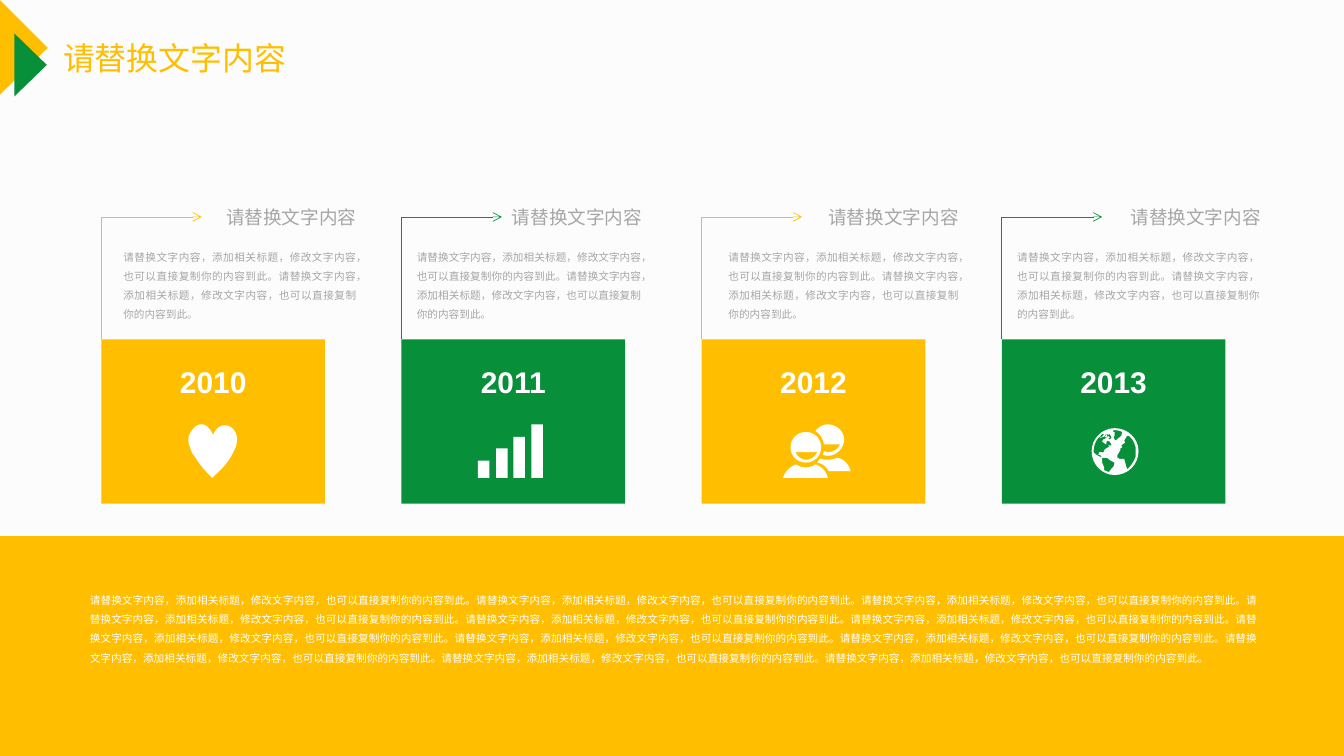
from lxml import etree
from pptx import Presentation
from pptx.dml.color import RGBColor
from pptx.enum import lang, shapes, text
from pptx.oxml.ns import qn
from pptx.util import Inches, Pt

GOLD = RGBColor(0xFF, 0xBF, 0x00)
GREEN = RGBColor(0x08, 0x8F, 0x39)
GREY = RGBColor(0xA6, 0xA6, 0xA6)
WHITE = RGBColor(0xFF, 0xFF, 0xFF)
PAPER = RGBColor(0xFC, 0xFC, 0xFC)
ALIGN = text.PP_ALIGN
RECT = shapes.MSO_SHAPE.RECTANGLE
HEAD = "请替换文字内容"
BODY = "请替换文字内容，添加相关标题，修改文字内容，也可以直接复制你的内容到此。"

deck = Presentation()
deck.slide_width, deck.slide_height = Inches(14.06), Inches(7.91)
slide = deck.slides.add_slide(deck.slide_layouts[6])
slide.background.fill.solid()
slide.background.fill.fore_color.rgb = PAPER


def write(words, x, y, w, h, size, color, align=ALIGN.LEFT, gap=1.0, bold=False, wrap=True):
    box = slide.shapes.add_textbox(Inches(x), Inches(y), Inches(w), Inches(h))
    frame = box.text_frame
    frame.margin_left = frame.margin_right = frame.margin_top = frame.margin_bottom = 0
    frame.word_wrap = wrap
    frame.auto_size = text.MSO_AUTO_SIZE.SHAPE_TO_FIT_TEXT
    para = frame.paragraphs[0]
    para.alignment, para.line_spacing = align, gap
    run = para.add_run()
    run.text = words
    font = run.font
    font.name, font.size, font.bold = "Arial", Pt(size), bold
    font.color.rgb = color
    font.language_id = lang.MSO_LANGUAGE_ID.SIMPLIFIED_CHINESE
    etree.SubElement(run._r.get_or_add_rPr(), qn("a:ea"), typeface="Arial")


def draw(rings, color):
    """Fill closed rings; a step of two numbers is a corner, of six a cubic curve."""
    pen = None
    for ring in rings:
        x, y = ring[0]
        dots = []
        for step in ring[1:]:
            if len(step) == 2:
                dots.append(step)
            else:
                a, b, c, d, e, f = step
                for n in range(1, 9):
                    t = n / 8
                    s = 1 - t
                    dots.append((s**3 * x + 3*s*s*t * a + 3*s*t*t * c + t**3 * e,
                                 s**3 * y + 3*s*s*t * b + 3*s*t*t * d + t**3 * f))
            x, y = step[-2:]
        start = [Inches(v) for v in ring[0]]
        if pen is None:
            pen = slide.shapes.build_freeform(*start, scale=1.0)
        else:
            pen.move_to(*start)
        pen.add_line_segments([(Inches(p), Inches(q)) for p, q in dots], close=True)
    form = pen.convert_to_shape()
    form.shadow.inherit = False
    form.fill.solid()
    form.fill.fore_color.rgb = color
    form.line.fill.background()


# Footer band, four cards and chart bars: group, left, top, width, height, colour
cards = [1.06 + 3.14 * i for i in range(4)]
hues = [GOLD, GREEN] * 2
blocks = [(slide.shapes, 0, 5.61, 14.06, 2.3, GOLD)]
blocks += [(slide.shapes, x, 3.55, 2.34, 1.72, hue) for x, hue in zip(cards, hues)]
bars = slide.shapes.add_group_shape()
blocks += [(bars.shapes, x, 5 - h, 0.12, h, WHITE)
           for x, h in [(5, 0.18), (5.19, 0.31), (5.37, 0.43), (5.56, 0.56)]]
for home, x, y, w, h, hue in blocks:
    rect = home.add_shape(RECT, Inches(x), Inches(y), Inches(w), Inches(h))
    rect.shadow.inherit = False
    rect.fill.solid()
    rect.fill.fore_color.rgb = hue
    rect.line.fill.background()
tree = slide.shapes._spTree
tree.append(bars._element)
write(BODY * 12, 0.94, 6.15, 12.23, 0.81, 8, WHITE, ALIGN.JUSTIFY, 1.5)

# Rising line, arrow, heading, body and year of each card
heads = [(2.03, 1.7), (5.15, 1.57), (8.09, 1.94), (11.47, 1.72)]
bodies = [(1.29, 2.44), (4.36, 2.35), (7.62, 2.41), (10.64, 2.54)]
for i, (x, hue) in enumerate(zip(cards, hues)):
    for ends in [(x, 3.55, x, 2.27), (x, 2.27, x + 1.05, 2.27)]:
        line = slide.shapes.add_connector(shapes.MSO_CONNECTOR.STRAIGHT, *map(Inches, ends))
        line.line.color.rgb = hue
        line.line.width = Pt(0.5)
        etree.SubElement(line._element.spPr, qn("a:effectLst"))
    etree.SubElement(line.line._get_or_add_ln(), qn("a:tailEnd"), type="arrow")
    left, wide = heads[i]
    write(HEAD, left, 2.15, wide, 0.24, 14, GREY, ALIGN.RIGHT)
    left, wide = bodies[i]
    write(BODY * 2, left, 2.56, wide, 0.81, 8, GREY, ALIGN.JUSTIFY, 1.5)
    write(str(2010 + i), x + 0.43, 3.8, 1.48, 0.38, 22.5, WHITE, ALIGN.CENTER, bold=True)

# Heart
draw([[(2.23, 4.55), (2.25, 4.5, 2.29, 4.45, 2.35, 4.45), (2.38, 4.45, 2.41, 4.46, 2.44, 4.49),
       (2.47, 4.53, 2.48, 4.56, 2.48, 4.59), (2.48, 4.64, 2.47, 4.68, 2.44, 4.73),
       (2.42, 4.78, 2.39, 4.82, 2.35, 4.87), (2.32, 4.91, 2.27, 4.95, 2.22, 5),
       (2.18, 4.96, 2.14, 4.92, 2.11, 4.88), (2.07, 4.83, 2.04, 4.78, 2.01, 4.74),
       (1.99, 4.69, 1.97, 4.64, 1.97, 4.6), (1.97, 4.56, 1.99, 4.53, 2.01, 4.5),
       (2.04, 4.46, 2.07, 4.44, 2.11, 4.44), (2.16, 4.44, 2.2, 4.49, 2.23, 4.55)]], WHITE)

# Two people: front face, smile, shoulders, then the back face and shoulders
draw([[(8.43, 4.84), (8.52, 4.84, 8.59, 4.77, 8.59, 4.68), (8.59, 4.59, 8.52, 4.52, 8.43, 4.52),
       (8.34, 4.52, 8.27, 4.59, 8.27, 4.68), (8.27, 4.77, 8.34, 4.84, 8.43, 4.84)],
      [(8.55, 4.73), (8.53, 4.78, 8.48, 4.81, 8.43, 4.81), (8.39, 4.81, 8.34, 4.78, 8.32, 4.73)],
      [(8.53, 4.86), (8.5, 4.88, 8.46, 4.89, 8.43, 4.89), (8.39, 4.89, 8.36, 4.88, 8.33, 4.86),
       (8.27, 4.88, 8.22, 4.92, 8.19, 5), (8.66, 5), (8.64, 4.92, 8.59, 4.88, 8.53, 4.86)],
      [(8.62, 4.65), (8.79, 4.65), (8.76, 4.7, 8.72, 4.73, 8.67, 4.73),
       (8.65, 4.73, 8.64, 4.73, 8.62, 4.72), (8.62, 4.73, 8.61, 4.74, 8.61, 4.76),
       (8.62, 4.76, 8.64, 4.77, 8.66, 4.77), (8.75, 4.77, 8.83, 4.69, 8.83, 4.6),
       (8.83, 4.51, 8.75, 4.44, 8.66, 4.44), (8.61, 4.44, 8.56, 4.47, 8.53, 4.51),
       (8.58, 4.54, 8.61, 4.59, 8.62, 4.65)],
      [(8.76, 4.79), (8.73, 4.8, 8.7, 4.81, 8.66, 4.81), (8.64, 4.81, 8.61, 4.81, 8.58, 4.8),
       (8.57, 4.81, 8.56, 4.82, 8.55, 4.84), (8.6, 4.85, 8.64, 4.88, 8.67, 4.93),
       (8.9, 4.93), (8.87, 4.84, 8.82, 4.8, 8.76, 4.79)]], WHITE)

# Globe: disc with the land cut out, west, north, east
draw([[(11.66, 4.48), (11.53, 4.48, 11.42, 4.59, 11.42, 4.72), (11.42, 4.86, 11.53, 4.97, 11.66, 4.97),
       (11.8, 4.97, 11.91, 4.86, 11.91, 4.72), (11.91, 4.59, 11.8, 4.48, 11.66, 4.48)],
      [(11.65, 4.88), (11.63, 4.9), (11.6, 4.94), (11.55, 4.92), (11.55, 4.89), (11.53, 4.84),
       (11.53, 4.79), (11.47, 4.76), (11.44, 4.73), (11.44, 4.67, 11.46, 4.61, 11.5, 4.57),
       (11.51, 4.58), (11.55, 4.57), (11.57, 4.54), (11.58, 4.54), (11.56, 4.57), (11.57, 4.58),
       (11.58, 4.57), (11.58, 4.54), (11.59, 4.55), (11.61, 4.54), (11.63, 4.58), (11.61, 4.6),
       (11.59, 4.59), (11.61, 4.58), (11.59, 4.56), (11.58, 4.58), (11.54, 4.6), (11.53, 4.62),
       (11.57, 4.65), (11.58, 4.61), (11.61, 4.62), (11.63, 4.66), (11.59, 4.66), (11.61, 4.67),
       (11.56, 4.7), (11.54, 4.74), (11.53, 4.73), (11.5, 4.73), (11.49, 4.76), (11.51, 4.76),
       (11.53, 4.79), (11.58, 4.79), (11.62, 4.82), (11.66, 4.84)],
      [(11.51, 4.57), (11.51, 4.56), (11.53, 4.54), (11.55, 4.54), (11.53, 4.57)],
      [(11.66, 4.6), (11.65, 4.57), (11.66, 4.56), (11.66, 4.52), (11.64, 4.52), (11.65, 4.5),
       (11.69, 4.5, 11.72, 4.51, 11.74, 4.52), (11.73, 4.56), (11.67, 4.61)],
      [(11.88, 4.78), (11.86, 4.83, 11.83, 4.88, 11.79, 4.91), (11.76, 4.8), (11.71, 4.8),
       (11.69, 4.79), (11.69, 4.76), (11.72, 4.71), (11.72, 4.69), (11.74, 4.68), (11.73, 4.66),
       (11.77, 4.63), (11.76, 4.61), (11.79, 4.56), (11.81, 4.56), (11.84, 4.59),
       (11.86, 4.62, 11.87, 4.64, 11.88, 4.68), (11.88, 4.72)]], WHITE)

# Corner triangles and title
draw([[(0, 0), (0.5, 0.5), (0, 0.99)]], GOLD)
draw([[(0.15, 0.35), (0.49, 0.68), (0.15, 1.01)]], GREEN)
write(HEAD, 0.66, 0.32, 2.36, 0.44, 24, GOLD, gap=1.2, wrap=False)

deck.save("out.pptx")
